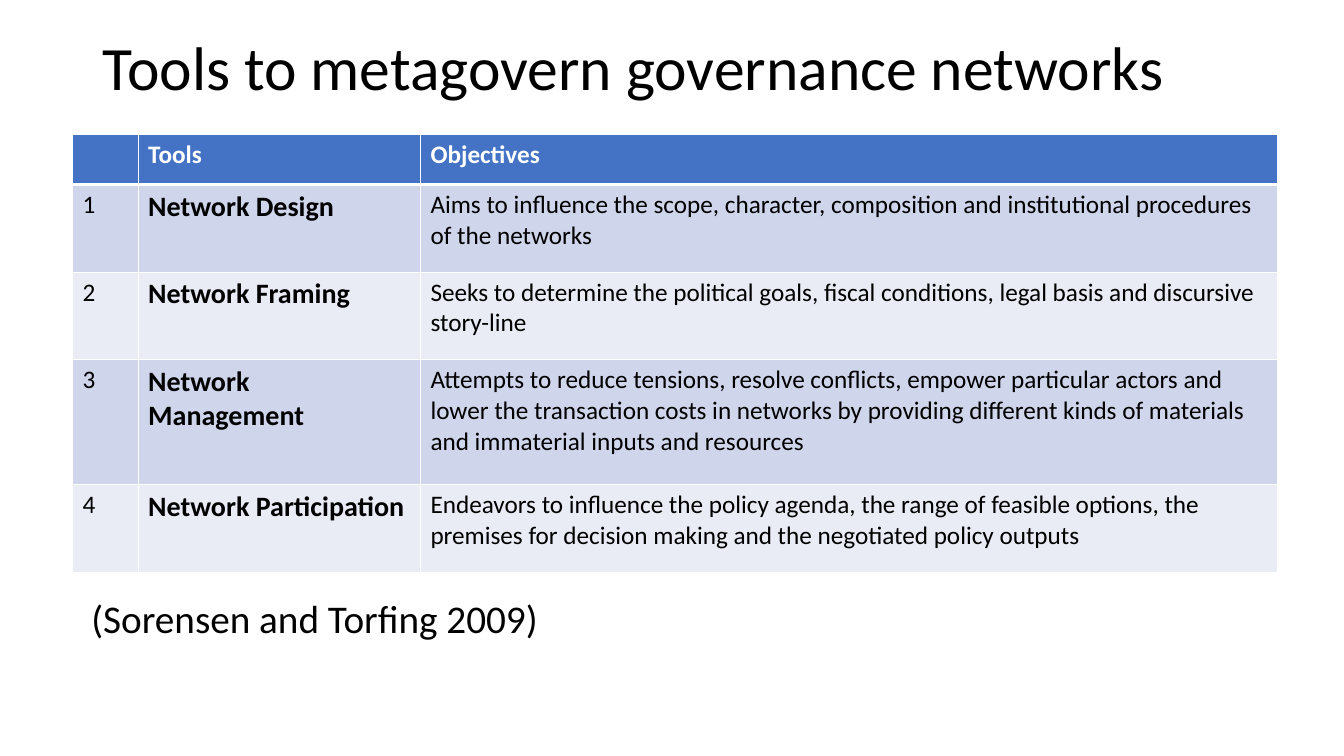
from lxml import etree
from pptx import Presentation
from pptx.dml.color import RGBColor
from pptx.enum import text
from pptx.oxml import ns
from pptx.util import Inches, Pt

# Content
TITLE = "Tools to metagovern governance networks"
SOURCE = " (Sorensen and Torfing 2009)"
HEADER = ("", "Tools", "Objectives")
TOOLS = [
    ("Network Design",
     "Aims to influence the scope, character, composition and institutional "
     "procedures of the networks"),
    ("Network Framing",
     "Seeks to determine the political goals, fiscal conditions, legal basis "
     "and discursive story-line"),
    ("Network Management",
     "Attempts to reduce tensions, resolve conflicts, empower particular actors "
     "and lower the transaction costs in networks by providing different kinds "
     "of materials and immaterial inputs and resources"),
    ("Network Participation",
     "Endeavors to influence the policy agenda, the range of feasible options, "
     "the premises for decision making and the negotiated policy outputs"),
]

# Format
FONT, BLACK, WHITE, BLUE = "Calibri", "000000", "FFFFFF", "4472C4"
BANDS = ("CFD5EA", "E9EBF5")
COLS = (0.65, 2.8, 8.5)
ROWS = (0.5, 0.87, 0.87, 1.24, 0.87)


def rgb(value):
    return RGBColor.from_string(value)


def write(tf, words, size=18, color=BLACK, bold=False, spacing=None, before=None):
    p = tf.paragraphs[0]
    p.line_spacing = spacing
    p.space_before = before
    r = p.add_run()
    r.text = words
    r.font.name, r.font.size, r.font.bold = FONT, Pt(size), bold
    r.font.color.rgb = rgb(color)


def add_text(s, words, box, anchor=text.MSO_ANCHOR.TOP, **fmt):
    tf = s.shapes.add_textbox(*map(Inches, box)).text_frame
    tf.word_wrap = True
    tf.vertical_anchor = anchor
    write(tf, words, spacing=0.9, **fmt)


def set_borders(cell, widths):
    """Put border lines before the fill, as the schema requires."""
    tc_pr = cell._tc.get_or_add_tcPr()
    for i, (side, width) in enumerate(widths.items()):
        ln = etree.Element(ns.qn("a:ln" + side), w=str(Pt(width)))
        fill = etree.SubElement(ln, ns.qn("a:solidFill"))
        etree.SubElement(fill, ns.qn("a:srgbClr"), val=WHITE)
        tc_pr.insert(i, ln)


def add_tools_table(s):
    rows = [HEADER] + [(str(n), *tool) for n, tool in enumerate(TOOLS, 1)]
    box = (0.72, 1.33, sum(COLS), sum(ROWS))
    table = s.shapes.add_table(len(ROWS), len(COLS), *map(Inches, box)).table
    for column, width in zip(table.columns, COLS):
        column.width = Inches(width)
    for i, values in enumerate(rows):
        table.rows[i].height = Inches(ROWS[i])
        head = i == 0
        for j, words in enumerate(values):
            cell = table.cell(i, j)
            cell.fill.solid()
            cell.fill.fore_color.rgb = rgb(BLUE if head else BANDS[(i - 1) % 2])
            set_borders(cell, {"L": 1, "R": 1, "T": 3 if i == 1 else 1,
                               "B": 3 if head else 1})
            if words:
                write(cell.text_frame, words, bold=head or j == 1,
                      size=20 if j == 1 and not head else 18,
                      color=WHITE if head else BLACK)


def main():
    prs = Presentation()
    prs.slide_width, prs.slide_height = Inches(13.33), Inches(7.5)
    s = prs.slides.add_slide(prs.slide_layouts[6])
    add_text(s, TITLE, (0.92, 0.3, 11.5, 0.8), text.MSO_ANCHOR.MIDDLE, size=44)
    add_tools_table(s)
    add_text(s, SOURCE, (0.72, 5.9, 11.5, 0.84), size=28, before=Pt(10))
    prs.save("out.pptx")


if __name__ == "__main__":
    main()
